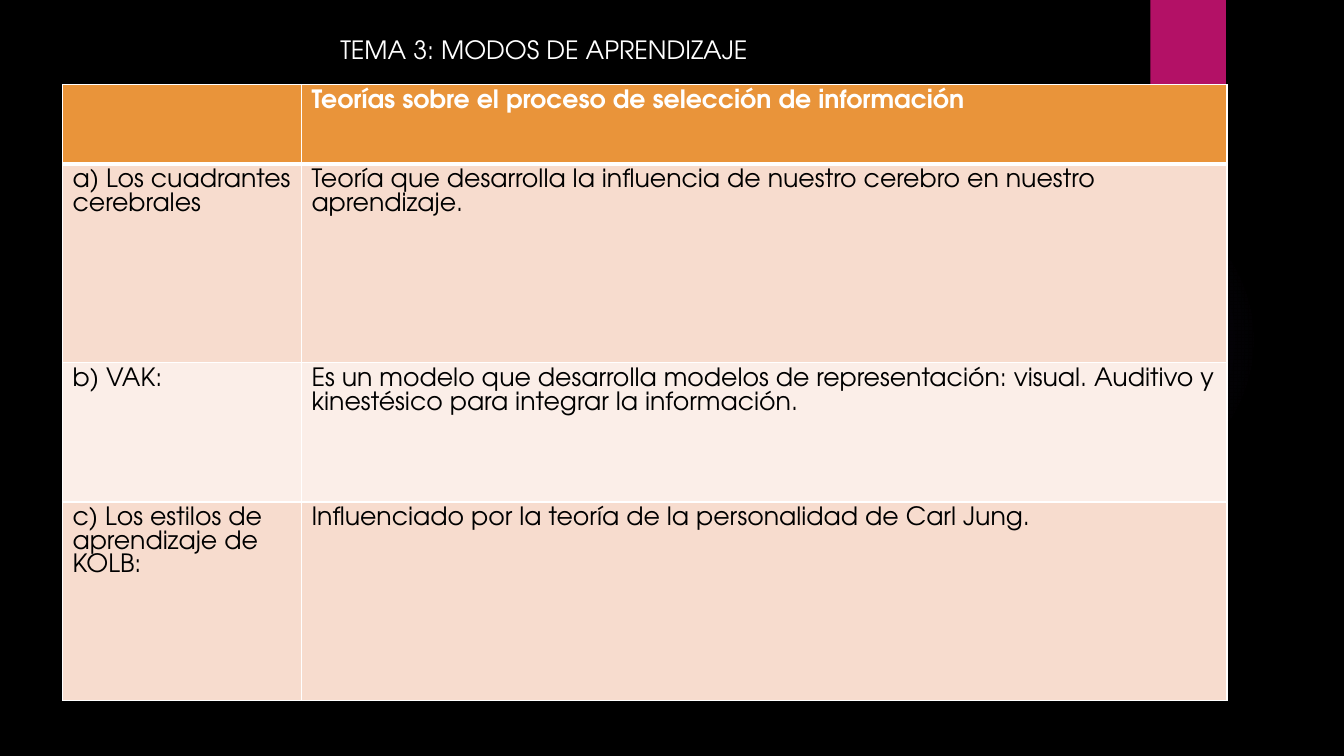
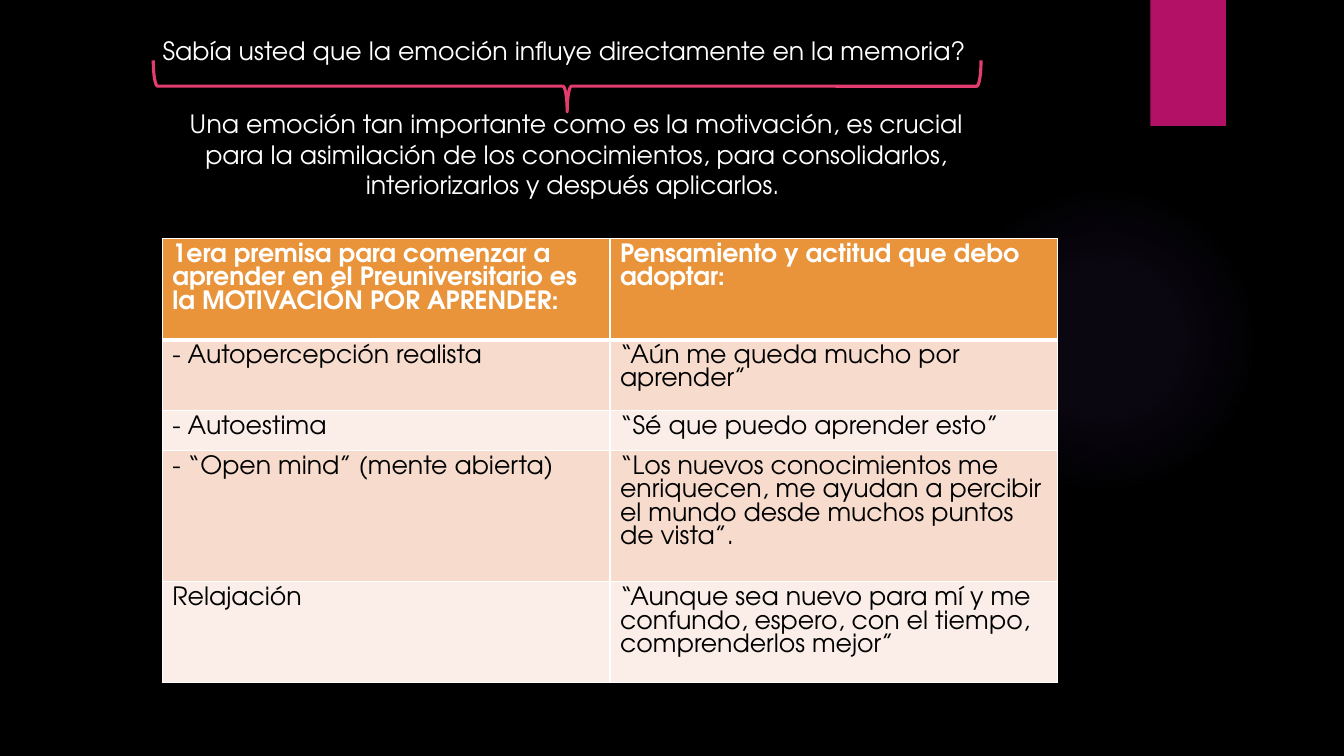
import pptx
import pptx.dml.color
import pptx.enum.shapes
import pptx.enum.text
import pptx.oxml
import pptx.oxml.ns
import pptx.util

RGBColor = pptx.dml.color.RGBColor
Inches = pptx.util.Inches
Pt = pptx.util.Pt
PresetShape = pptx.enum.shapes.MSO_SHAPE

# Shared look
BLACK = RGBColor(0x00, 0x00, 0x00)
WHITE = RGBColor(0xFF, 0xFF, 0xFF)
MAGENTA = RGBColor(0xB3, 0x11, 0x66)
PINK = RGBColor(0xE3, 0x3D, 0x6F)
ORANGE = RGBColor(0xE9, 0x94, 0x3A)
PEACH = RGBColor(0xF7, 0xDC, 0xCE)
CREAM = RGBColor(0xFB, 0xEE, 0xE8)
VIOLET = RGBColor(0x9B, 0x6B, 0xF2)
FONT = "TeX Gyre Adventor"
FONT_SIZE = Pt(18)

# Row heights follow the number of text lines
LINE_HEIGHT = 0.3
CELL_MARGINS = 0.1

LEARNING_THEORIES = [
    ("", "Teorías sobre el proceso de selección de información"),
    ("a) Los cuadrantes cerebrales",
     "Teoría que desarrolla la influencia de nuestro cerebro en nuestro aprendizaje."),
    ("b) VAK:",
     "Es un modelo que desarrolla modelos de representación: visual. Auditivo y "
     "kinestésico para integrar la información."),
    ("c) Los estilos de aprendizaje de KOLB:",
     "Influenciado por la teoría de la personalidad de Carl Jung."),
]
MOTIVATION = [
    ("1era premisa para comenzar a aprender en el Preuniversitario es la "
     "MOTIVACIÓN POR APRENDER:", "Pensamiento y actitud que debo adoptar:"),
    ("- Autopercepción realista", "“Aún me queda mucho por aprender”"),
    ("- Autoestima", "“Sé que puedo aprender esto”"),
    ("- “Open mind” (mente abierta)",
     "“Los nuevos conocimientos me enriquecen, me ayudan a percibir el mundo "
     "desde muchos puntos de vista”."),
    ("Relajación",
     "“Aunque sea nuevo para mí y me confundo, espero, con el tiempo, "
     "comprenderlos mejor”"),
]
MOTIVATION_LINES = [3, 2, 1, 4, 3]


def drawing_xml(xml):
    """Parse one drawing element given without its namespace declaration."""
    tag, rest = xml.split(" ", 1)
    return pptx.oxml.parse_xml(f"{tag} {pptx.oxml.ns.nsdecls('a')} {rest}")


def write_text(text_frame, text, color, bold=False):
    text_frame.text = text
    paragraph = text_frame.paragraphs[0]
    for font in [paragraph.font] + [run.font for run in paragraph.runs]:
        font.name, font.size, font.bold = FONT, FONT_SIZE, bold
        font.color.rgb = color
    return paragraph


def write_centered(shape, box, text):
    shape.left, shape.top, shape.width, shape.height = map(Inches, box)
    text_frame = shape.text_frame
    text_frame.word_wrap = True
    text_frame.auto_size = pptx.enum.text.MSO_AUTO_SIZE.SHAPE_TO_FIT_TEXT
    text_frame.vertical_anchor = pptx.enum.text.MSO_ANCHOR.TOP
    paragraph = write_text(text_frame, text, WHITE)
    paragraph.alignment = pptx.enum.text.PP_ALIGN.CENTER


def add_plain_shape(slide, preset, box):
    shape = slide.shapes.add_shape(preset, *map(Inches, box))
    shape.shadow.inherit = False
    shape.line.fill.background()
    return shape


def decorate_layout(layout, slide):
    """Draw the background, glow and corner band, and hand them to the layout."""
    layout.background.fill.solid()
    layout.background.fill.fore_color.rgb = BLACK

    glow = add_plain_shape(slide, PresetShape.OVAL, (9.41, 1.83, 3.08, 3.08))
    glow.fill.gradient()
    stops = "".join(
        f'<a:gs pos="{position * 1000}"><a:srgbClr val="{VIOLET}">'
        f'<a:alpha val="{opacity * 1000}"/></a:srgbClr></a:gs>'
        for position, opacity in ((0, 7), (36, 6), (69, 0)))
    gradient = glow.element.spPr.find(pptx.oxml.ns.qn("a:gradFill"))
    glow.element.spPr.replace(gradient, drawing_xml(
        f'<a:gradFill rotWithShape="1"><a:gsLst>{stops}</a:gsLst><a:path path="circle">'
        '<a:fillToRect l="50000" t="50000" r="50000" b="50000"/></a:path></a:gradFill>'))

    band = add_plain_shape(slide, PresetShape.RECTANGLE, (11.41, 0, 0.75, 1.25))
    band.fill.solid()
    band.fill.fore_color.rgb = MAGENTA

    for shape in (glow, band):
        layout.shapes.element.append(shape.element)


def set_borders(cell, top, bottom):
    properties = cell._tc.get_or_add_tcPr()
    widths = {"lnL": 1, "lnR": 1, "lnT": top, "lnB": bottom}
    for index, (side, width) in enumerate(widths.items()):
        properties.insert(index, drawing_xml(
            f'<a:{side} w="{Pt(width)}"><a:solidFill><a:srgbClr val="{WHITE}"/>'
            f'</a:solidFill></a:{side}>'))


def add_text_table(slide, left, top, column_widths, row_heights, rows):
    frame = slide.shapes.add_table(
        len(rows), len(column_widths), Inches(left), Inches(top),
        Inches(sum(column_widths)), Inches(sum(row_heights)))
    table = frame.table
    for column, width in zip(table.columns, column_widths):
        column.width = Inches(width)
    for row, height in zip(table.rows, row_heights):
        row.height = Inches(height)

    for row_index, texts in enumerate(rows):
        is_header = row_index == 0
        fill_color = ORANGE if is_header else (CREAM, PEACH)[row_index % 2]
        for column_index, text in enumerate(texts):
            cell = table.cell(row_index, column_index)
            cell.fill.solid()
            cell.fill.fore_color.rgb = fill_color
            set_borders(cell, top=3 if row_index == 1 else 1, bottom=3 if is_header else 1)
            write_text(cell.text_frame, text, WHITE if is_header else BLACK, bold=is_header)


def add_brace(slide, box):
    """Add a brace that opens upwards; the box is given before its quarter turn."""
    brace = add_plain_shape(slide, PresetShape.RIGHT_BRACE, box)
    brace.rotation = 90
    brace.fill.background()
    brace.line.color.rgb = PINK
    brace.line.width = Pt(2.25)


def build_theories_slide(slide):
    write_centered(slide.shapes.title, (0.64, 0.29, 9.51, 0.4),
                   "TEMA 3: MODOS DE APRENDIZAJE")
    add_text_table(slide, 0.62, 0.84, [2.37, 9.18], [0.79, 1.97, 1.38, 1.97],
                   LEARNING_THEORIES)


def build_motivation_slide(slide):
    write_centered(slide.shapes.title, (0.83, 0.3, 9.6, 0.4),
                   "Sabía usted que la emoción influye directamente en la memoria? ")
    add_brace(slide, (5.37, -3.25, 0.51, 8.21))
    box = (1.61, 1.03, 8.21, 1.01)
    write_centered(
        slide.shapes.add_textbox(*map(Inches, box)), box,
        "Una emoción tan importante como es la motivación, es crucial para la "
        "asimilación de los conocimientos, para consolidarlos, interiorizarlos y "
        "después aplicarlos. ")
    row_heights = [lines * LINE_HEIGHT + CELL_MARGINS for lines in MOTIVATION_LINES]
    add_text_table(slide, 1.61, 2.37, [4.44, 4.44], row_heights, MOTIVATION)


def main():
    presentation = pptx.Presentation()
    presentation.slide_width = Inches(13.33)
    presentation.slide_height = Inches(7.5)
    title_only = presentation.slide_layouts[5]
    slides = [presentation.slides.add_slide(title_only) for _ in range(2)]
    decorate_layout(title_only, slides[0])
    build_theories_slide(slides[0])
    build_motivation_slide(slides[1])
    presentation.save("out.pptx")


if __name__ == "__main__":
    main()
